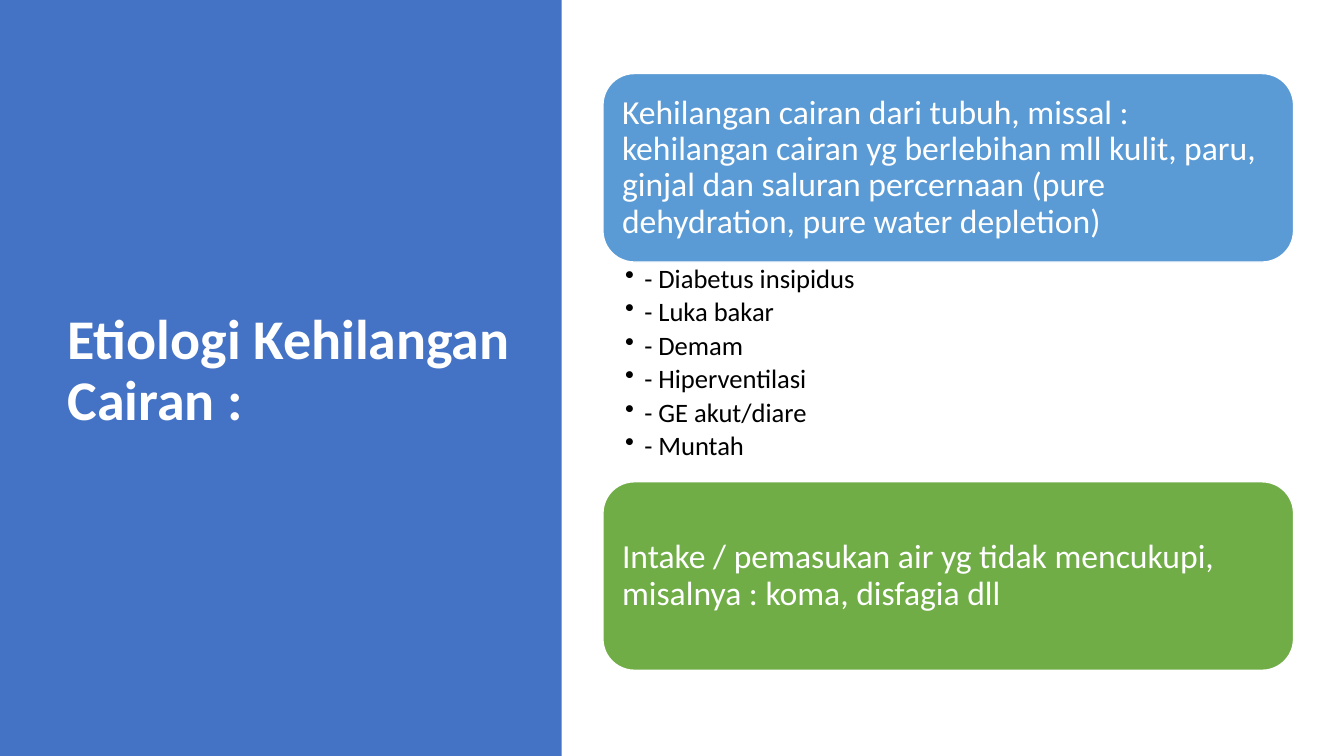
"""Build the slide on the causes of fluid loss."""
from lxml import etree
from pptx import Presentation
from pptx import util as u
from pptx.dml.color import RGBColor
from pptx.enum import shapes, text
from pptx.oxml import ns

PX = 9144
WHITE = RGBColor(0xFF, 0xFF, 0xFF)
BLACK = RGBColor(0, 0, 0)
NAVY = RGBColor(0x44, 0x72, 0xC4)
BLUE = RGBColor(0x5B, 0x9B, 0xD5)
GREEN = RGBColor(0x70, 0xAD, 0x47)

TITLE = "Etiologi Kehilangan Cairan :"
LOSS = ("Kehilangan cairan dari tubuh, missal : kehilangan cairan yg berlebihan "
        "mll kulit, paru, ginjal dan saluran percernaan "
        "(pure dehydration, pure water depletion)")
INTAKE = "Intake / pemasukan air yg tidak mencukupi, misalnya : koma, disfagia dll"
CAUSES = ["Diabetus insipidus", "Luka bakar", "Demam",
          "Hiperventilasi", "GE akut/diare", "Muntah"]
LEFT, WIDTH = 598, 685


def px(*vals):
    """Turn px lengths into EMU."""
    return [v * PX for v in vals]


def style(para, size, color, bold=False):
    """Set the font and line spacing of a paragraph."""
    font = para.font
    font.name, font.size, font.bold = "Calibri", u.Pt(size), bold
    font.color.rgb = color
    para.alignment = text.PP_ALIGN.LEFT
    para.line_spacing = 0.9


def inset(frame, left, top, right, low):
    """Set the margins of a text frame and wrap its text."""
    frame.word_wrap = True
    (frame.margin_left, frame.margin_top,
     frame.margin_right, frame.margin_bottom) = px(left, top, right, low)


def block(slide, kind, box, fill):
    """Add a filled shape without outline or shadow."""
    shape = slide.shapes.add_shape(kind, *px(*box))
    shape.shadow.inherit = False
    shape.fill.solid()
    shape.fill.fore_color.rgb = fill
    shape.line.fill.background()
    return shape


def head(slide, words, box):
    """Place the title above the side panel."""
    title = slide.shapes.title
    title.left, title.top, title.width, title.height = px(*box)
    frame = title.text_frame
    frame.text = words
    frame.auto_size = text.MSO_AUTO_SIZE.NONE
    frame.vertical_anchor = text.MSO_ANCHOR.MIDDLE
    style(frame.paragraphs[0], 40, WHITE, True)
    slide.shapes.element.append(title.element)


def card(slide, words, top, fill):
    """Add a rounded card with its text."""
    shape = block(slide, shapes.MSO_SHAPE.ROUNDED_RECTANGLE,
                  (LEFT, top, WIDTH, 187), fill)
    shape.line.color.rgb = WHITE
    shape.line.width = u.Pt(1)
    frame = shape.text_frame
    frame.text = words
    frame.vertical_anchor = text.MSO_ANCHOR.MIDDLE
    inset(frame, 10, 10, 10, 10)
    style(frame.paragraphs[0], 24, WHITE)


def bullets(slide, items, box):
    """Add a bulleted list."""
    frame = slide.shapes.add_textbox(*px(*box)).text_frame
    inset(frame, 22, 3, 19, 3)
    frame.text = "\n".join(f"- {item}" for item in items)
    for para in frame.paragraphs:
        style(para, 19, BLACK)
        para.space_after = u.Pt(3.4)
        props = para._p.get_or_add_pPr()
        props.set("marL", str(19 * PX))
        props.set("indent", str(-19 * PX))
        mark = etree.Element(ns.qn("a:buChar"), char="•")
        props.find(ns.qn("a:defRPr")).addprevious(mark)


def main():
    """Build and save the slide."""
    deck = Presentation()
    deck.slide_width, deck.slide_height = px(1333, 750)
    slide = deck.slides.add_slide(deck.slide_layouts[5])
    block(slide, shapes.MSO_SHAPE.RECTANGLE, (0, 0, 557, 750), NAVY)
    head(slide, TITLE, (57, 68, 472, 602))
    card(slide, LOSS, 73, BLUE)
    bullets(slide, CAUSES, (LEFT, 260, WIDTH, 217))
    card(slide, INTAKE, 478, GREEN)
    deck.save("out.pptx")


if __name__ == "__main__":
    main()
